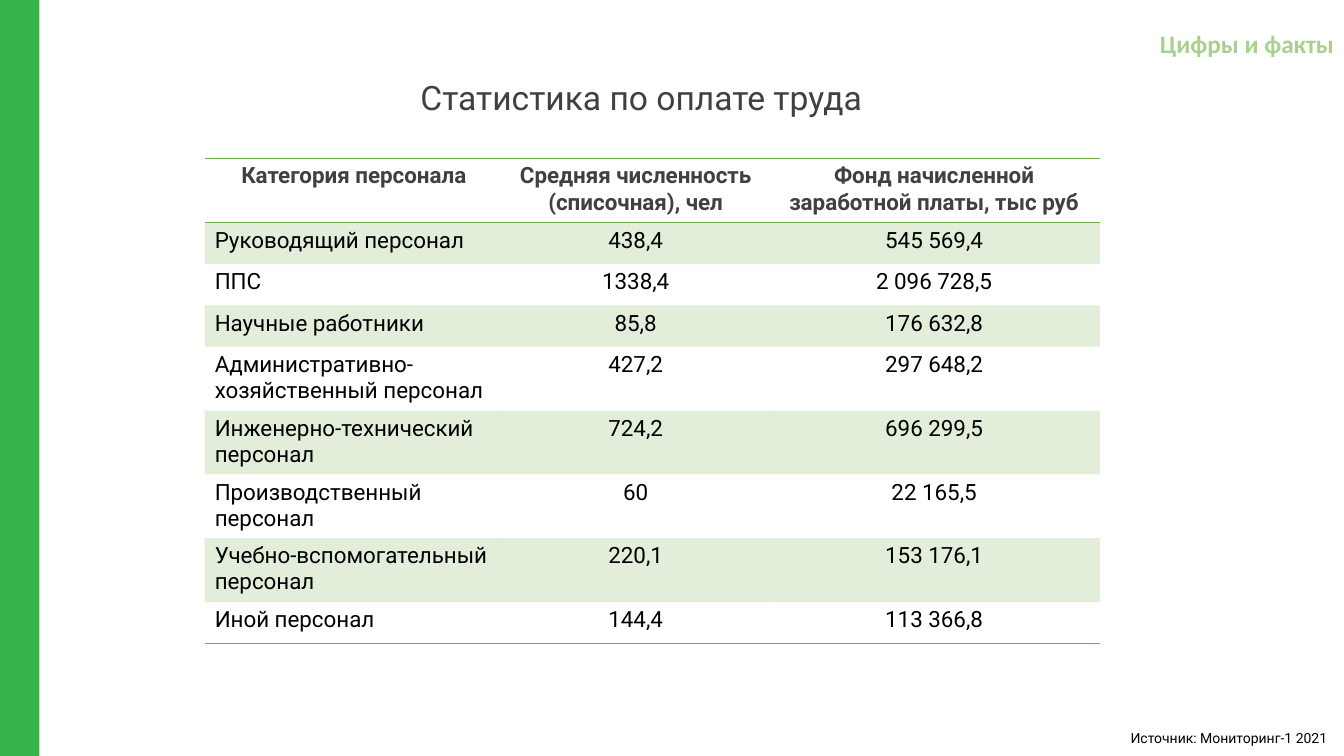
"""Build a slide with a table of staff pay statistics."""
import pptx
import pptx.util
import pptx.dml.color
import pptx.enum.shapes
import pptx.enum.text
import pptx.oxml.ns
import lxml.etree

Inches = pptx.util.Inches
ALIGN = pptx.enum.text.PP_ALIGN
qn = pptx.oxml.ns.qn

COLORS = {
    "bar": "37B34B",
    "label": "A9D18E",
    "head": "404040",
    "text": "000000",
    "accent": "70AD47",
}
PLAIN = "{2D5ABB26-0587-4C30-8999-92F81FD0307C}"
WIDTHS = (2.96, 2.63, 3.29)
ROWS = (
    ("Категория персонала", "Средняя численность (списочная), чел",
     "Фонд начисленной заработной платы, тыс руб"),
    ("Руководящий персонал", "438,4", "545 569,4"),
    ("ППС", "1338,4", "2 096 728,5"),
    ("Научные работники", "85,8", "176 632,8"),
    ("Административно-хозяйственный персонал", "427,2", "297 648,2"),
    ("Инженерно-технический персонал", "724,2", "696 299,5"),
    ("Производственный персонал", "60", "22 165,5"),
    ("Учебно-вспомогательный персонал", "220,1", "153 176,1"),
    ("Иной персонал", "144,4", "113 366,8"),
)


def rgb(name):
    return pptx.dml.color.RGBColor.from_string(COLORS[name])


def style(para, size, color, align, bold=False, face="Roboto"):
    para.alignment = align
    font = para.font
    font.name, font.size, font.bold = face, pptx.util.Pt(size), bold
    font.color.rgb = rgb(color)


def add_bar(slide, *box):
    kind = pptx.enum.shapes.MSO_SHAPE.RECTANGLE
    bar = slide.shapes.add_shape(kind, *map(Inches, box))
    bar.shadow.inherit = False
    bar.fill.solid()
    bar.fill.fore_color.rgb = rgb("bar")
    bar.line.fill.background()


def add_text(slide, box, text, *look, **more):
    frame = slide.shapes.add_textbox(*map(Inches, box)).text_frame
    frame.word_wrap = True
    frame.text = text
    para = frame.paragraphs[0]
    style(para, *look, **more)
    return para


def add_rule(cell, side):
    props = cell._tc.get_or_add_tcPr()
    line = lxml.etree.SubElement(props, qn("a:ln" + side), w=str(pptx.util.Pt(1)))
    fill = lxml.etree.SubElement(line, qn("a:solidFill"))
    lxml.etree.SubElement(fill, qn("a:srgbClr"), val=COLORS["accent"])


def fill_cell(cell, band):
    if not band:
        cell.fill.background()
        return
    cell.fill.solid()
    cell.fill.fore_color.rgb = rgb("accent")
    color = cell._tc.tcPr.find(qn("a:solidFill")).find(qn("a:srgbClr"))
    lxml.etree.SubElement(color, qn("a:alpha"), val="20000")


def add_grid(slide):
    box = map(Inches, (2.03, 1.57, sum(WIDTHS), 3.92))
    shape = slide.shapes.add_table(len(ROWS), len(WIDTHS), *box)
    next(shape.element.iter(qn("a:tableStyleId"))).text = PLAIN
    table = shape.table
    for col, width in zip(table.columns, WIDTHS):
        col.width = Inches(width)
    for r, row in enumerate(ROWS):
        head = r == 0
        sides = "TB" if head else "B" if r == len(ROWS) - 1 else ""
        table.rows[r].height = Inches(0.64 if head else 0.41)
        for c, text in enumerate(row):
            cell = table.cell(r, c)
            cell.text = text
            align = ALIGN.CENTER if head or c else ALIGN.LEFT
            style(cell.text_frame.paragraphs[0], 16,
                  "head" if head else "text", align, bold=head)
            for side in sides:
                add_rule(cell, side)
            fill_cell(cell, r % 2 == 1)


def main():
    deck = pptx.Presentation()
    deck.slide_width, deck.slide_height = Inches(13.33), Inches(7.5)
    slide = deck.slides.add_slide(deck.slide_layouts[6])
    add_bar(slide, 0, 0, 0.39, 7.5)
    add_text(slide, (10.76, 0.23, 2.57, 0.4), "Цифры и факты",
             18, "label", ALIGN.RIGHT, bold=True, face="Calibri")
    title = add_text(slide, (0.61, 0.76, 11.5, 1.45),
                     "Статистика по оплате труда", 24, "head", ALIGN.CENTER)
    title.line_spacing = 0.9
    add_grid(slide)
    add_text(slide, (7.57, 7.19, 5.69, 0.27), "Источник: Мониторинг-1 2021",
             10, "text", ALIGN.RIGHT)
    deck.save("out.pptx")


if __name__ == "__main__":
    main()
